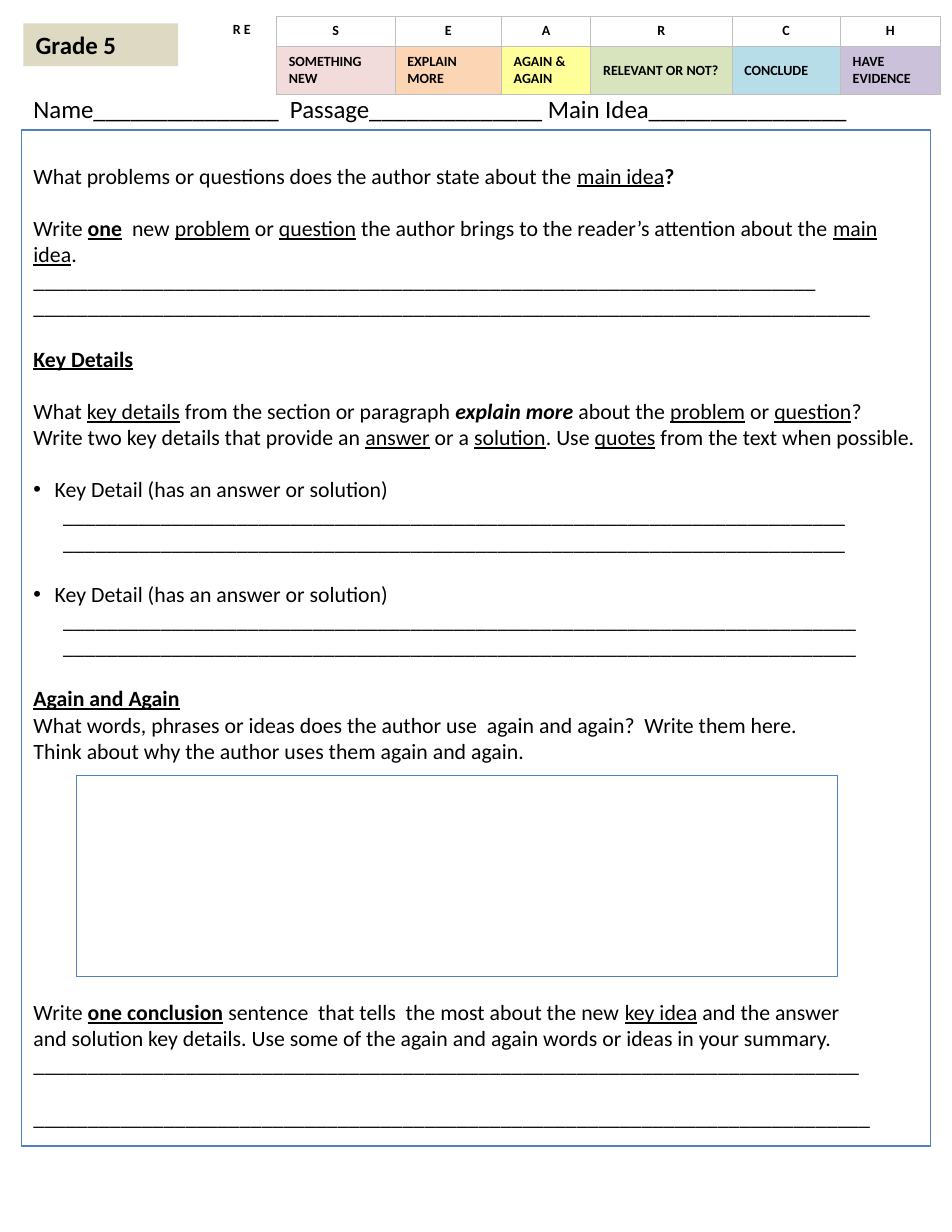
from pptx import Presentation
from pptx.dml.color import RGBColor
from pptx.enum.shapes import MSO_SHAPE as Geo
from pptx.enum.text import MSO_ANCHOR as Anchor, MSO_AUTO_SIZE as Fit, PP_ALIGN as Align
from pptx.oxml.ns import qn
from pptx.util import Cm, Pt
from lxml.etree import SubElement

COLORS = {
    "text": "000000", "paper": "FFFFFF", "outline": "4F81BD", "grid": "BFBFBF",
    "grade": "DDD9C3", "something": "F2DCDB", "explain": "FCD5B5", "again": "FFFF99",
    "relevant": "D7E4BD", "conclude": "B7DEE8", "have": "CCC1DA",
}
SEARCH = [
    ("S", "SOMETHING NEW", "something"), ("E", "EXPLAIN MORE", "explain"),
    ("A", "AGAIN & AGAIN", "again"), ("R", "RELEVANT OR NOT?", "relevant"),
    ("C", "CONCLUDE", "conclude"), ("H", "HAVE EVIDENCE", "have"),
]
COLUMN_WIDTHS = [1.57, 2.69, 2.41, 2.03, 3.2, 2.46, 2.26]
ROW_HEIGHTS = [0.69, 1.09]
LINE_PITCH = 16.8
BULLET_INDENT = 0.48
ANSWER_INDENT = 0.67


def color(name):
    return RGBColor.from_string(COLORS[name])


def answer_lines(*lengths, indent=0.0):
    return [(0, indent, False, [("_" * length, "")]) for length in lengths]


def key_detail(length):
    label = (1, BULLET_INDENT, True, [("Key Detail (has an answer or solution)", "")])
    return [label, *answer_lines(length, length, indent=ANSWER_INDENT)]


def prompt(gap, *runs):
    return gap, 0, False, runs


QUESTIONS = [
    prompt(0, ("What problems or questions does the author state about the ", ""),
           ("main idea", "u"), ("?", "b")),
    prompt(1, ("Write ", ""), ("one", "bu"), ("  new ", ""), ("problem", "u"), (" or ", ""),
           ("question", "u"), (" the author brings to the reader’s attention about the ", ""),
           ("main idea", "u"), (".", "")),
    *answer_lines(72, 77),
    prompt(1, ("Key Details", "bu")),
    prompt(1, ("What ", ""), ("key details", "u"), (" from the section or paragraph ", ""),
           ("explain more ", "bi"), ("about the ", ""), ("problem", "u"), (" or ", ""),
           ("question", "u"), ("?", "")),
    prompt(0, ("Write two key details that provide an ", ""), ("answer", "u"), (" or a ", ""),
           ("solution", "u"), (". Use ", ""), ("quotes", "u"),
           (" from the text when possible.", "")),
    *key_detail(72),
    *key_detail(73),
    prompt(1, ("Again and Again", "bu")),
    prompt(0, ("What words, phrases or ideas does the author use  again and again?"
               "  Write them here.", "")),
    prompt(0, ("Think about why the author uses them again and again.", "")),
    prompt(9, ("Write ", ""), ("one conclusion", "bu"), (" ", ""),
           ("sentence  that tells  the most about the new ", ""), ("key idea", "u"),
           (" and the answer", "")),
    prompt(0, ("and solution key details. Use some of the again and again words or ideas "
               "in your summary.", "")),
    *answer_lines(76),
    prompt(1, ("_" * 77, "")),
]


class Worksheet:
    font = "Calibri"
    inset_x, inset_y, cell_inset_y = 0.28, 0.14, 0.13

    def __init__(self, slide):
        self.slide = slide

    def place(self, shape, left, top, width, height):
        shape.left, shape.top = Cm(left), Cm(top)
        shape.width, shape.height = Cm(width), Cm(height)

    def frame(self, shape, top_inset=inset_y):
        text = shape.text_frame
        text.word_wrap = True
        text.auto_size = Fit.NONE
        text.vertical_anchor = Anchor.TOP
        text.margin_left = text.margin_right = Cm(self.inset_x)
        text.margin_top, text.margin_bottom = Cm(top_inset), Cm(self.inset_y)
        return text

    def run(self, paragraph, words, size, style=""):
        run = paragraph.add_run()
        run.text = words
        run.font.name, run.font.size = self.font, Pt(size)
        run.font.color.rgb = color("text")
        run.font.bold = "b" in style
        run.font.italic = "i" in style
        run.font.underline = "u" in style

    def title(self, words, *box):
        title = self.slide.shapes.title
        self.place(title, *box)
        title.fill.solid()
        title.fill.fore_color.rgb = color("grade")
        paragraph = self.frame(title).paragraphs[0]
        paragraph.alignment = Align.LEFT
        self.run(paragraph, words, 16, "b")

    def label(self, words, *box):
        label = self.slide.shapes.add_textbox(*map(Cm, box))
        self.run(self.frame(label).paragraphs[0], words, 16)

    def outline(self, *box, fill=None):
        panel = self.slide.shapes.add_shape(Geo.RECTANGLE, *map(Cm, box))
        panel.shadow.inherit = False
        if fill:
            panel.fill.solid()
            panel.fill.fore_color.rgb = color(fill)
        else:
            panel.fill.background()
        panel.line.color.rgb = color("outline")
        panel.line.width = Pt(0.75)
        return panel

    def questions(self, prompts, *box):
        panel = self.outline(*box, fill="paper")
        text = self.frame(panel, top_inset=0.73)
        for number, (gap, indent, bulleted, runs) in enumerate(prompts):
            paragraph = text.add_paragraph() if number else text.paragraphs[0]
            paragraph.alignment = Align.LEFT
            paragraph.space_before = Pt(gap * LINE_PITCH)
            properties = paragraph._p.get_or_add_pPr()
            properties.set("marL", str(Cm(indent)))
            if bulleted:
                properties.set("indent", str(-Cm(indent)))
                SubElement(properties, qn("a:buFont"), typeface="Arial")
                SubElement(properties, qn("a:buChar"), char="•")
            for words, style in runs:
                self.run(paragraph, words, 14, style)

    def borders(self, cell, visible):
        properties = cell._tc.get_or_add_tcPr()
        for side in "LRTB":
            edge = SubElement(properties, qn(f"a:ln{side}"), w=str(Pt(0.5)))
            if side in visible:
                solid = SubElement(edge, qn("a:solidFill"))
                SubElement(solid, qn("a:srgbClr"), val=COLORS["grid"])
            else:
                SubElement(edge, qn("a:noFill"))

    def cell(self, cell, words, fill, align, anchor=Anchor.MIDDLE, visible="LRTB"):
        self.borders(cell, visible)
        cell.fill.solid()
        cell.fill.fore_color.rgb = color(fill)
        cell.vertical_anchor = anchor
        cell.margin_left = cell.margin_right = Cm(self.inset_x)
        cell.margin_top = cell.margin_bottom = Cm(self.cell_inset_y)
        paragraph = cell.text_frame.paragraphs[0]
        paragraph.alignment = align
        if words:
            self.run(paragraph, words, 9, "b")

    def search_table(self, left, top):
        size = sum(COLUMN_WIDTHS), sum(ROW_HEIGHTS)
        table = self.slide.shapes.add_table(
            len(ROW_HEIGHTS), len(COLUMN_WIDTHS), *map(Cm, (left, top, *size))).table
        table.first_row = table.horz_banding = False
        for column, width in zip(table.columns, COLUMN_WIDTHS):
            column.width = Cm(width)
        for row, height in zip(table.rows, ROW_HEIGHTS):
            row.height = Cm(height)
        for row, words in enumerate(("R E", "")):
            self.cell(table.cell(row, 0), words, "paper", Align.CENTER, Anchor.TOP, "R")
        table.cell(0, 0).merge(table.cell(1, 0))
        for column, (letter, meaning, fill) in enumerate(SEARCH, start=1):
            self.cell(table.cell(0, column), letter, "paper", Align.CENTER)
            self.cell(table.cell(1, column), meaning, fill, Align.LEFT)


def main():
    deck = Presentation()
    deck.slide_width, deck.slide_height = Cm(21.59), Cm(27.94)
    sheet = Worksheet(deck.slides.add_slide(deck.slide_layouts[5]))
    sheet.questions(QUESTIONS, 0.48, 2.95, 20.62, 23.04)
    sheet.label(f"Name{'_' * 15}  Passage{'_' * 14} Main Idea{'_' * 16}",
                0.48, 1.98, 20.4, 0.97)
    sheet.search_table(4.7, 0.36)
    sheet.title("Grade 5", 0.53, 0.53, 3.51, 0.97)
    sheet.outline(1.73, 17.58, 17.27, 4.57)
    deck.save("out.pptx")


if __name__ == "__main__":
    main()
